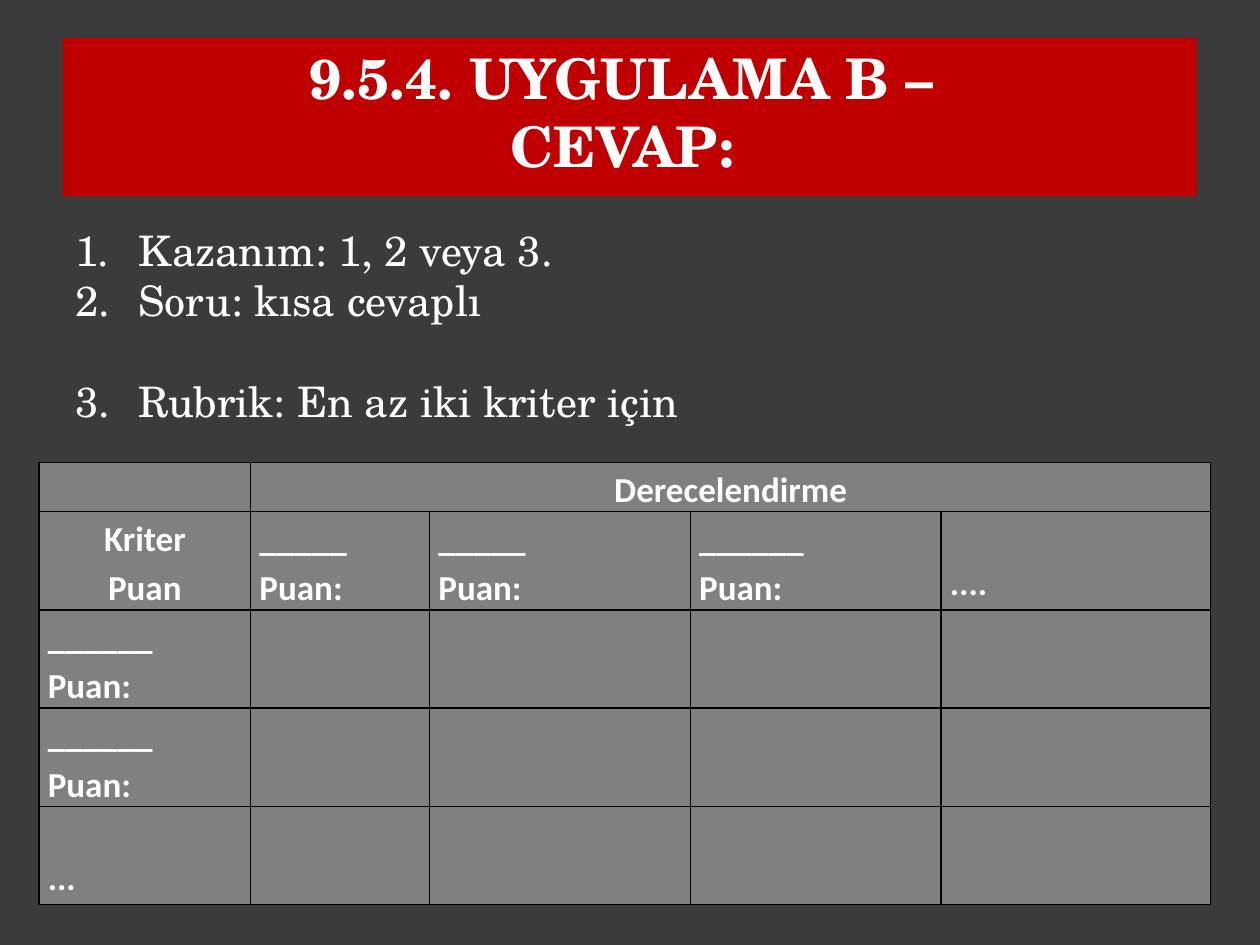
"""Build the rubric answer slide with a title band, a numbered list and a table."""
from lxml.etree import SubElement as Sub
from pptx import Presentation
from pptx.dml.color import RGBColor
from pptx.enum.shapes import MSO_SHAPE as Shape
from pptx.enum.text import MSO_ANCHOR as Anchor, MSO_AUTO_SIZE as Fit, PP_ALIGN as Align
from pptx.oxml.ns import qn
from pptx.util import Inches, Pt

DARK = RGBColor(0x3B, 0x3B, 0x3B)
RED = RGBColor(0xC0, 0x00, 0x00)
GREY = RGBColor(0x80, 0x80, 0x80)
WHITE = RGBColor(0xFF, 0xFF, 0xFF)
SERIF, SANS = "TeX Gyre Schola", "Calibri"


def write(frame, lines, face, size, bold, align):
    frame.text = "\n".join(lines)
    for par in frame.paragraphs:
        par.alignment = align
        font = par.font
        font.name, font.size, font.bold = face, Pt(size), bold
        font.color.rgb = WHITE


def edge(cell):
    props = cell._tc.get_or_add_tcPr()
    for spot, side in enumerate(("lnL", "lnR", "lnT", "lnB")):
        line = Sub(props, qn(f"a:{side}"), w=str(Pt(1)))
        props.insert(spot, line)
        fill = Sub(line, qn("a:solidFill"))
        Sub(fill, qn("a:srgbClr"), val="000000")


deck = Presentation()
deck.slide_width, deck.slide_height = Inches(10), Inches(7.5)
slide = deck.slides.add_slide(deck.slide_layouts[6])
slide.background.fill.solid()
slide.background.fill.fore_color.rgb = DARK
wide, high = deck.slide_width, deck.slide_height
left = int(wide * 0.05)

band = slide.shapes.add_shape(
    Shape.RECTANGLE, left, int(high * 0.04), int(wide * 0.9), Inches(1.26))
band.shadow.inherit = False
band.fill.solid()
band.fill.fore_color.rgb = RED
band.line.fill.background()
band.text_frame.vertical_anchor = Anchor.TOP
write(band.text_frame, ["9.5.4. UYGULAMA B – ", "CEVAP: "], SERIF, 32, True, Align.CENTER)

steps = slide.shapes.add_textbox(left, Inches(1.72), Inches(8.88), Inches(1.72)).text_frame
steps.word_wrap = True
steps.auto_size = Fit.SHAPE_TO_FIT_TEXT
steps.vertical_anchor = Anchor.MIDDLE
write(steps, ["Kazanım: 1, 2 veya 3.", "Soru: kısa cevaplı", "Rubrik: En az iki kriter için"],
      SERIF, 24, False, Align.LEFT)
for par in steps.paragraphs:
    props = par._p.get_or_add_pPr()
    props.set("marL", str(Inches(0.5)))
    props.set("indent", str(-Inches(0.5)))
    mark = Sub(props, qn("a:buAutoNum"), type="arabicPeriod")
    props.insert(0, mark)
steps.paragraphs[-1].space_before = Pt(29)

cols = [1.68, 1.42, 2.07, 1.99, 2.14]
rows = [0.39] + [0.78] * 4
score = ["______", "Puan:"]
short = ["_____", "Puan:"]
texts = {
    (0, 1): ["Derecelendirme"],
    (1, 0): ["Kriter", "Puan"],
    (1, 1): short, (1, 2): short, (1, 3): score, (1, 4): ["...."],
    (2, 0): score, (3, 0): score, (4, 0): ["..."],
}
mid = {(0, 1), (1, 0)}
low = {(1, 4), (4, 0)}
grid = slide.shapes.add_table(
    len(rows), len(cols), Inches(0.31), Inches(3.67), Inches(sum(cols)), Inches(sum(rows))).table
for col, size in zip(grid.columns, cols):
    col.width = Inches(size)
for row, size in zip(grid.rows, rows):
    row.height = Inches(size)
grid.cell(0, 1).merge(grid.cell(0, 4))

for r in range(len(rows)):
    for c in range(len(cols)):
        cell, key = grid.cell(r, c), (r, c)
        cell.margin_left = cell.margin_right = Inches(0.07)
        cell.margin_top = cell.margin_bottom = 0
        cell.fill.solid()
        cell.fill.fore_color.rgb = GREY
        edge(cell)
        if key in texts:
            write(cell.text_frame, texts[key], SANS, 20, True,
                  Align.CENTER if key in mid else Align.LEFT)
            for par in cell.text_frame.paragraphs:
                par.line_spacing = 1.15
        if key in low:
            cell.vertical_anchor = Anchor.BOTTOM
            cell.margin_bottom = Inches(0.04)

deck.save("out.pptx")
